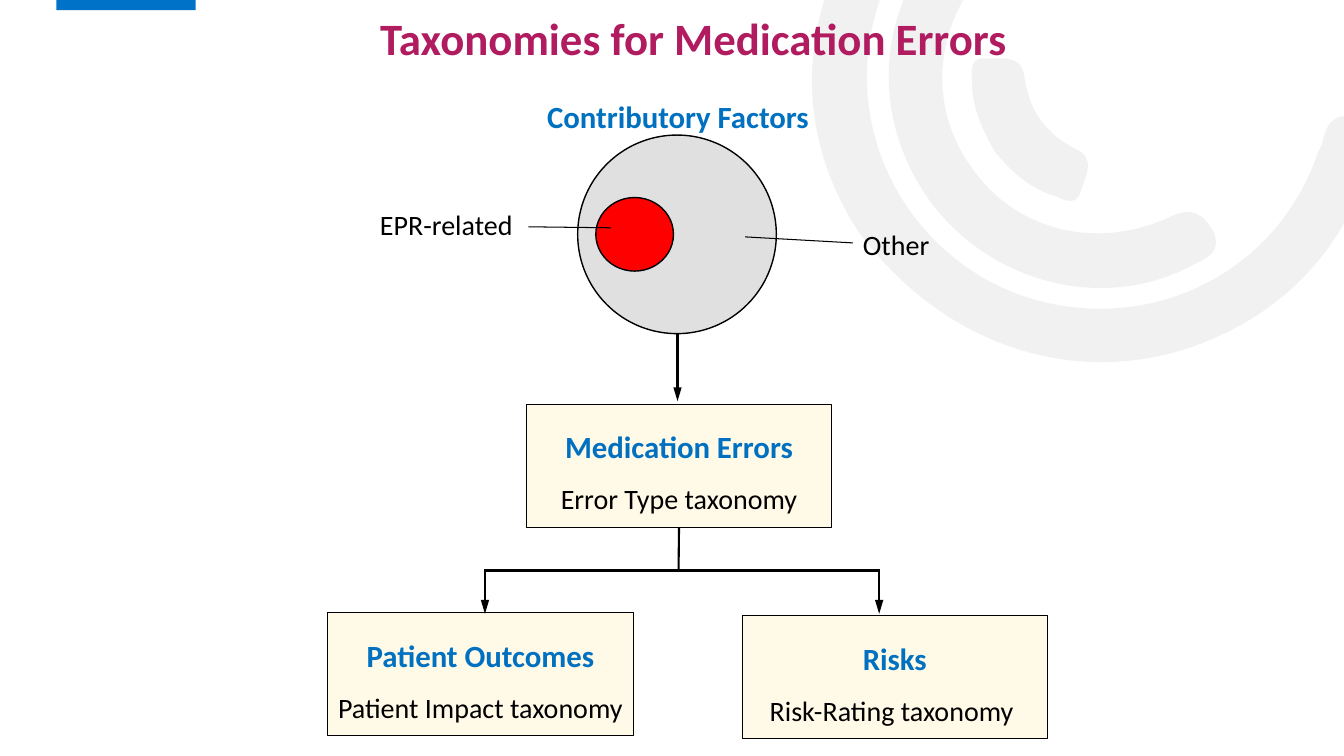
from lxml import etree
from pptx import Presentation
from pptx.dml.color import RGBColor
from pptx.enum.shapes import MSO_CONNECTOR, MSO_SHAPE
from pptx.enum.text import MSO_ANCHOR, MSO_AUTO_SIZE, PP_ALIGN
from pptx.oxml.ns import qn
from pptx.util import Pt

PX = 9144
FONT = "Calibri"
BLACK = RGBColor(0x00, 0x00, 0x00)
BLUE = RGBColor(0x00, 0x70, 0xC0)
BAR_BLUE = RGBColor(0x00, 0x72, 0xC7)
MAGENTA = RGBColor(0xB0, 0x1C, 0x5F)
CREAM = RGBColor(0xFF, 0xF9, 0xE7)
GREY = RGBColor(0xE0, 0xE0, 0xE0)
ARC_GREY = RGBColor(0xE7, 0xE6, 0xE6)
RED = RGBColor(0xFF, 0x00, 0x00)
LEFT, CENTER = PP_ALIGN.LEFT, PP_ALIGN.CENTER
TOP = MSO_ANCHOR.TOP
GROW = MSO_AUTO_SIZE.SHAPE_TO_FIT_TEXT
NO_FIT = MSO_AUTO_SIZE.NONE
RECT, OVAL = MSO_SHAPE.RECTANGLE, MSO_SHAPE.OVAL
STRAIGHT = MSO_CONNECTOR.STRAIGHT
SITE_BOTTOM = 2

ARCS = [
    ((851, 229), [
        (799, 149, 787, 50, 838, -50), (890, -152, 976, -203, 1090, -207),
        (1105, -207, 1121, -210, 1131, -195), (1144, -175, 1127, -154, 1098, -154),
        (967, -154, 865, -59, 860, 68), (856, 181, 936, 281, 1046, 302),
        (1160, 324, 1270, 261, 1307, 152), (1309, 148, 1311, 144, 1312, 140),
        (1316, 119, 1327, 111, 1349, 117), (1373, 124, 1367, 141, 1361, 156),
        (1334, 245, 1278, 307, 1191, 341), (1070, 387, 936, 345, 851, 229)]),
    ((922, 199), [
        (862, 115, 869, 7, 940, -68), (951, -79, 962, -95, 980, -78),
        (995, -64, 997, -50, 979, -32), (925, 26, 920, 108, 965, 168),
        (1008, 229, 1088, 249, 1161, 215), (1182, 205, 1193, 212, 1203, 229),
        (1213, 250, 1197, 256, 1183, 263), (1096, 310, 983, 282, 922, 199)]),
    ((987, 151), [
        (975, 130, 964, 107, 964, 82), (964, 73, 961, 57, 976, 58),
        (992, 59, 1013, 53, 1016, 76), (1021, 110, 1036, 132, 1067, 148),
        (1088, 157, 1076, 176, 1072, 189), (1068, 206, 1055, 198, 1045, 194),
        (1021, 187, 1003, 170, 987, 151)]),
]


def add_text(p, text, size=20, color=BLACK, bold=False, align=LEFT, spacing=None):
    """Add a formatted run to a paragraph."""
    p.alignment = align
    if spacing:
        p.line_spacing = spacing
    r = p.add_run()
    r.text = text
    r.font.name, r.font.size, r.font.bold = FONT, Pt(size), bold
    r.font.color.rgb = color


class Canvas:
    """Draws styled elements on one slide."""

    def __init__(self, s):
        self.s = s

    def style(self, sp, fill, line=None):
        sp.shadow.inherit = False
        sp.fill.solid()
        sp.fill.fore_color.rgb = fill
        if line:
            sp.line.color.rgb = BLACK
            sp.line.width = Pt(line)
        else:
            sp.line.fill.background()
        return sp

    def shape(self, kind, x, y, w, h, fill, line=None):
        sp = self.s.shapes.add_shape(kind, x * PX, y * PX, w * PX, h * PX)
        return self.style(sp, fill, line)

    def arc(self, start, curves):
        fb = self.s.shapes.build_freeform(start[0] * PX, start[1] * PX)
        fb.add_line_segments([(v[4] * PX, v[5] * PX) for v in curves])
        sp = self.style(fb.convert_to_shape(), ARC_GREY)
        segments = list(sp._element.iter(qn("a:lnTo")))
        for segment, v in zip(segments, curves):
            curve = etree.Element(qn("a:cubicBezTo"))
            for x, y in zip(v[::2], v[1::2]):
                etree.SubElement(curve, qn("a:pt"), x=str(x * PX - sp.left),
                                 y=str(y * PX - sp.top))
            segment.getparent().replace(segment, curve)
        color = sp._element.spPr.find(".//" + qn("a:srgbClr"))
        etree.SubElement(color, qn("a:alpha"), val="53000")

    def box(self, x, y, heading, taxonomy):
        sp = self.shape(RECT, x, y, 303, 122, CREAM, 0.75)
        tf = sp.text_frame
        tf.word_wrap = True
        tf.vertical_anchor = TOP
        tf.margin_left = tf.margin_right = 5 * PX
        add_text(tf.paragraphs[0], heading, size=22, color=BLUE, bold=True,
                 align=CENTER, spacing=1.5)
        add_text(tf.add_paragraph(), taxonomy, align=CENTER, spacing=1.5)
        return sp

    def label(self, x, y, w, h, text, **fmt):
        tf = self.s.shapes.add_textbox(x * PX, y * PX, w * PX, h * PX).text_frame
        tf.word_wrap = True
        tf.auto_size = GROW
        add_text(tf.paragraphs[0], text, **fmt)

    def line(self, x1, y1, x2, y2, width=1.5, arrow=False):
        cn = self.s.shapes.add_connector(STRAIGHT, x1 * PX, y1 * PX, x2 * PX, y2 * PX)
        cn.line.color.rgb = BLACK
        cn.line.width = Pt(width)
        if arrow:
            ln = cn._element.spPr.find(qn("a:ln"))
            etree.SubElement(ln, qn("a:tailEnd"), type="triangle", w="med", len="lg")
        etree.SubElement(cn._element.spPr, qn("a:effectLst"))
        return cn

    def title(self, x, y, w, h, text, **fmt):
        sp = self.s.shapes.title
        sp.left, sp.top, sp.width, sp.height = x * PX, y * PX, w * PX, h * PX
        tf = sp.text_frame
        tf.word_wrap = True
        tf.auto_size = NO_FIT
        tf.vertical_anchor = TOP
        add_text(tf.paragraphs[0], text, **fmt)
        sp._element.getparent().append(sp._element)


def main():
    """Build the taxonomy slide."""
    prs = Presentation()
    prs.slide_width, prs.slide_height = 1333 * PX, 750 * PX
    c = Canvas(prs.slides.add_slide(prs.slide_layouts[5]))

    for start, curves in ARCS:
        c.arc(start, curves)
    c.shape(RECT, 56, -2, 138, 12, BAR_BLUE)

    errors = c.box(522, 401, "Medication Errors", "Error Type taxonomy")
    c.box(325, 608, "Patient Outcomes", "Patient Impact taxonomy")
    c.line(672, 327, 672, 398, arrow=True)
    c.box(736, 611, "Risks", "Risk-Rating taxonomy ")

    c.shape(OVAL, 573, 134, 197, 197, GREY, 1)
    c.label(530, 92, 285, 47, "Contributory Factors", size=22, color=BLUE,
            bold=True, align=CENTER)
    c.shape(OVAL, 591, 196, 77, 73, RED, 1)
    c.line(524, 225, 606, 226, width=0.75)
    c.label(367, 201, 154, 44, "EPR-related")
    c.line(739, 235, 846, 241, width=0.75)
    c.label(846, 221, 165, 44, "Other")
    c.title(367, 6, 672, 64, "Taxonomies for Medication Errors", size=32,
            color=MAGENTA, bold=True)

    c.line(480, 566, 873, 566)
    c.line(673, 523, 673, 566).begin_connect(errors, SITE_BOTTOM)
    for x in (872, 481):
        c.line(x, 566, x, 609, arrow=True)

    prs.save("out.pptx")


if __name__ == "__main__":
    main()
